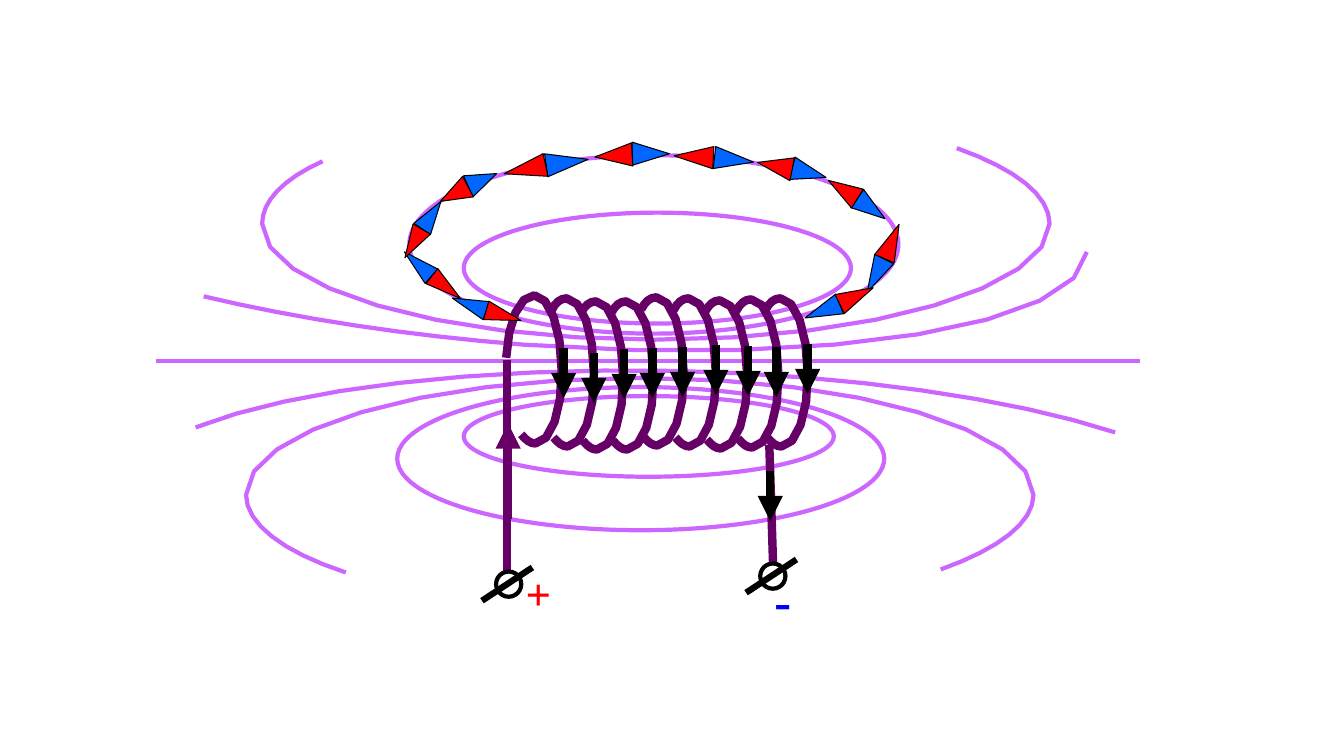
from collections import namedtuple

from lxml.etree import SubElement
from pptx import Presentation
from pptx.dml.color import RGBColor
from pptx.enum.shapes import MSO_CONNECTOR, MSO_SHAPE
from pptx.enum.text import MSO_ANCHOR, PP_ALIGN
from pptx.oxml.ns import qn
from pptx.util import Pt

PX = 9144
FIELD_STEPS = 8
TURN_STEPS = 4
COLORS = {
    "paper": "FFFFFF", "field": "CC66FF", "coil": "660066", "ink": "000000",
    "north": "FF0000", "south": "0066FF", "plus": "FF0000", "minus": "0000FF",
}
Box = namedtuple("Box", "left top")

FIELD_CURVES = [
    [(978, 150), (973, 223), (723, 264), (420, 242), (305, 233), (194, 216), (102, 194)],
    [(1006, 329), (902, 295), (742, 272), (571, 268), (375, 264), (193, 285), (94, 324)],
    [(833, 465), (892, 444), (925, 418), (925, 391), (925, 327), (750, 275), (534, 275),
     (319, 275), (144, 327), (144, 391), (144, 419), (179, 447), (243, 468)],
    [(849, 47), (908, 68), (941, 94), (941, 122), (941, 185), (766, 237), (550, 237),
     (335, 237), (160, 185), (160, 122), (160, 100), (180, 78), (220, 60)],
]
FIELD_LOOPS = [(360, 293, 367, 80), (306, 54, 485, 177), (294, 284, 483, 142)]

TURN = [(0, 0), (5, 6), (9, 9), (14, 9), (29, 9), (41, -24), (40, -64),
        (40, -105), (28, -138), (13, -138)]
FIRST_TURN_END = [(-2, -138), (-13, -112), (-15, -76)]
TURN_END = [(7, -138), (2, -134), (-2, -126)]
TURN_STARTS = [(149, 234), (178, 237), (208, 237), (238, 233), (270, 234),
               (332, 235), (301, 236), (361, 234)]
CURRENT_ARROWS = [(159, 145), (189, 150), (219, 146), (247, 145), (310, 142),
                  (342, 143), (370, 144), (364, 267), (401, 141), (277, 144)]
ARROW_LENGTH = 50
TERMINALS = [(92, 367), (354, 359)]

NEEDLES = [
    (19, 36, (5, 144, 132), (33, 167, 308)),
    (20, 33, (18, 97, 214.3), (0, 125, 30.4)),
    (23, 31, (67, 63, 245.8), (39, 77, 61.9)),
    (23, 42, (151, 40, 261.9), (109, 47, 78)),
    (23, 37, (234, 34, 270), (197, 36, 86.1)),
    (22, 39, (317, 39, 276.6), (277, 36, 92.7)),
    (23, 35, (391, 54, 285.1), (357, 47, 101.2)),
    (21, 37, (458, 155, 27.1), (474, 121, 203.1)),
    (22, 34, (453, 90, 305.9), (425, 71, 122)),
    (21, 37, (405, 190, 67.9), (439, 175, 244)),
    (19, 36, (56, 184, 110.2), (90, 195, 286.3)),
]


def color(name):
    """Return the named colour."""
    return RGBColor.from_string(COLORS[name])


def style_line(line, name, width):
    """Set the colour and point width of a line."""
    line.color.rgb = color(name)
    line.width = Pt(width)


def add_preset(parent, box, kind, place, fill=None, line=None, width=3, rotation=0):
    """Add a preset shape at a place inside the box."""
    left, top, wide, high = place
    shape = parent.shapes.add_shape(
        kind, (box.left + left) * PX, (box.top + top) * PX, wide * PX, high * PX)
    shape.shadow.inherit = False
    shape.rotation = rotation
    if fill:
        shape.fill.solid()
        shape.fill.fore_color.rgb = color(fill)
    else:
        shape.fill.background()
    if line:
        style_line(shape.line, line, width)
    else:
        shape.line.fill.background()
    return shape


def add_line(parent, box, start, end, name, width, arrow=False):
    """Add a straight line, with an arrowhead at its end if wanted."""
    x1, y1, x2, y2 = [
        (origin + offset) * PX for origin, offset in zip(box + box, start + end)]
    line = parent.shapes.add_connector(MSO_CONNECTOR.STRAIGHT, x1, y1, x2, y2)
    style_line(line.line, name, width)
    properties = line._element.spPr
    if arrow:
        SubElement(properties.find(qn("a:ln")), qn("a:tailEnd"), type="triangle")
    SubElement(properties, qn("a:effectLst"))


def bezier(controls, t):
    """Return the point at t on a cubic curve."""
    weights = ((1 - t) ** 3, 3 * t * (1 - t) ** 2, 3 * t * t * (1 - t), t ** 3)
    return [sum(w * value for w, value in zip(weights, axis)) for axis in zip(*controls)]


def add_curve(parent, box, controls, name, width, steps):
    """Draw an open outline through a chain of cubic curves."""
    controls = [((box.left + x) * PX, (box.top + y) * PX) for x, y in controls]
    points = [bezier(controls[i:i + 4], step / steps)
              for i in range(0, len(controls) - 1, 3)
              for step in range(1, steps + 1)]
    builder = parent.shapes.build_freeform(*controls[0], scale=1.0)
    builder.add_line_segments(points, close=False)
    curve = builder.convert_to_shape()
    curve.fill.background()
    curve.shadow.inherit = False
    style_line(curve.line, name, width)


def write_text(shape, text, size, name, font="Times New Roman", bold=True):
    """Write one centred, unwrapped line of text in a shape."""
    frame = shape.text_frame
    frame.word_wrap = False
    frame.vertical_anchor = MSO_ANCHOR.MIDDLE
    para = frame.paragraphs[0]
    para.alignment = PP_ALIGN.CENTER
    span = para.add_run()
    span.text = text
    span.font.name = font
    span.font.size = Pt(size)
    span.font.bold = bold
    span.font.color.rgb = color(name)


def draw_field(page, box):
    """Draw the magnetic field lines."""
    group = page.shapes.add_group_shape()
    add_preset(group, box, MSO_SHAPE.OVAL, (360, 111, 384, 110), line="field")
    add_line(group, box, (55, 258), (1031, 258), "field", 3)
    for controls in FIELD_CURVES:
        add_curve(group, box, controls, "field", 3, FIELD_STEPS)
    for place in FIELD_LOOPS:
        add_preset(group, box, MSO_SHAPE.OVAL, place, line="field")


def draw_coil(page, box):
    """Draw the coil with its wires, current arrows and terminals."""
    group = page.shapes.add_group_shape()
    for text, size, name, place in (("-", 36, "minus", (318, 370, 117, 50)),
                                    ("+", 32, "plus", (113, 366, 42, 44))):
        label = add_preset(group, box, MSO_SHAPE.RECTANGLE, place, fill="paper")
        write_text(label, text, size, name)
    add_line(group, box, (103, 157), (103, 379), "coil", 6)
    turns = [((117, 231), FIRST_TURN_END)] + [(start, TURN_END) for start in TURN_STARTS]
    for (left, top), ending in turns:
        corner = Box(box.left + left, box.top + top)
        add_curve(group, corner, TURN + ending, "coil", 6, TURN_STEPS)
    add_line(group, box, (104, 315), (104, 220), "coil", 6, arrow=True)
    add_line(group, box, (363, 241), (367, 367), "coil", 6)
    for x, y in CURRENT_ARROWS:
        add_line(group, box, (x, y), (x, y + ARROW_LENGTH), "ink", 6, arrow=True)
    for x, y in TERMINALS:
        add_preset(group, box, MSO_SHAPE.OVAL, (x, y, 25, 25), fill="paper", line="ink")
        add_line(group, box, (x + 36, y - 4), (x - 14, y + 29), "ink", 4.5)


def draw_needles(page, box):
    """Draw the ring of compass needles from width, length and two halves each."""
    for wide, high, *halves in NEEDLES:
        group = page.shapes.add_group_shape()
        for fill, (left, top, rotation) in zip(("south", "north"), halves):
            add_preset(group, box, MSO_SHAPE.FLOWCHART_MERGE, (left, top, wide, high),
                       fill=fill, line="ink", width=0.75, rotation=rotation)


def main():
    """Build and save the slide."""
    deck = Presentation()
    deck.slide_width, deck.slide_height = 1333 * PX, 750 * PX
    page = deck.slides.add_slide(deck.slide_layouts[6])
    draw_field(page, Box(100, 100))
    draw_coil(page, Box(400, 200))
    draw_needles(page, Box(400, 100))
    deck.save("out.pptx")


if __name__ == "__main__":
    main()
